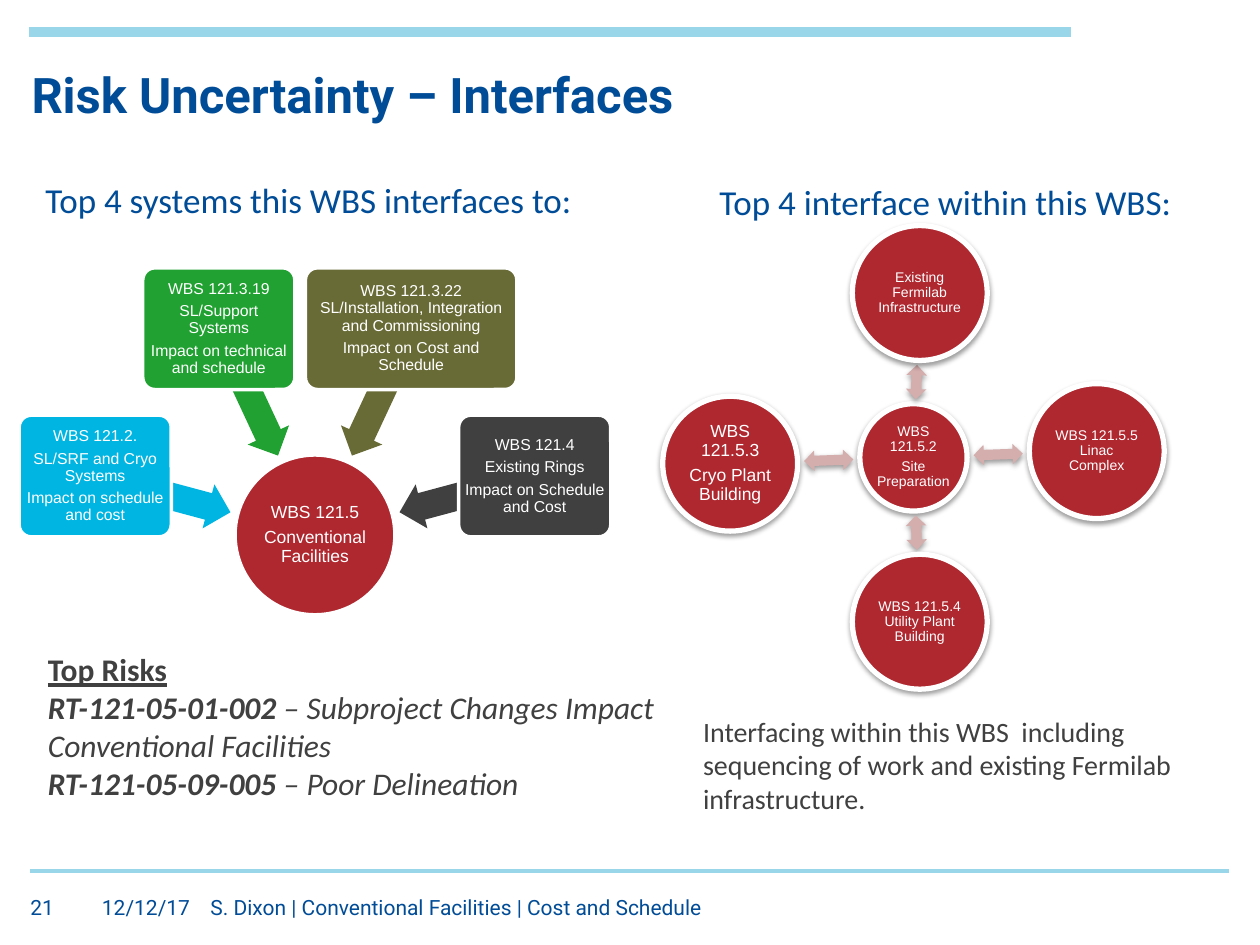
import math
from collections import namedtuple

from lxml import etree
from pptx import Presentation
from pptx import util as u
from pptx.dml.color import RGBColor
from pptx.enum import shapes, text
from pptx.oxml import ns

NAVY = RGBColor(0x00, 0x4C, 0x97)
SKY = RGBColor(0x99, 0xD6, 0xEA)
RED = RGBColor(0xAF, 0x27, 0x2F)
CYAN = RGBColor(0x00, 0xB5, 0xE2)
GREEN = RGBColor(0x20, 0xA1, 0x31)
OLIVE = RGBColor(0x68, 0x6B, 0x36)
CHARCOAL = RGBColor(0x40, 0x40, 0x40)
ROSE = RGBColor(0xD4, 0xAD, 0xAD)
WHITE = RGBColor(0xFF, 0xFF, 0xFF)

SHAPE = shapes.MSO_SHAPE
CELL = u.Inches(0.25)  # the slide is a grid of 40 columns by 30 rows
Box = namedtuple("Box", "left top width height")


def cells(*counts):
    return [round(count * CELL) for count in counts]


def centred(x, y, width, height):
    return Box(x - width / 2, y - height / 2, width, height)


def add_span(para, words, font, size, colour, bold=False, italic=False, underline=False):
    span = para.add_run()
    span.text = words
    span.font.name, span.font.size = font, u.Pt(size)
    span.font.color.rgb = colour
    span.font.bold, span.font.italic, span.font.underline = bold, italic, underline


def next_para(frame, index):
    return frame.paragraphs[0] if index == 0 else frame.add_paragraph()


def set_frame(frame, anchor, *insets):
    frame.word_wrap = True
    frame.auto_size = text.MSO_AUTO_SIZE.NONE
    frame.vertical_anchor = anchor
    (frame.margin_left, frame.margin_top,
     frame.margin_right, frame.margin_bottom) = [u.Inches(inset) for inset in insets]


def fill_placeholder(holder, box, paras, anchor, insets, **style):
    """Move a placeholder and fill it; each paragraph is a list of (words, emphasis) spans."""
    holder.left, holder.top, holder.width, holder.height = cells(*box)
    set_frame(holder.text_frame, anchor, *insets)
    for index, spans in enumerate(paras):
        para = next_para(holder.text_frame, index)
        props = para._p.get_or_add_pPr()
        props.set("marL", "0")
        props.set("indent", "0")
        etree.SubElement(props, ns.qn("a:buNone"))
        para.alignment = text.PP_ALIGN.LEFT
        para.space_before = u.Pt(0)
        for words, emphasis in spans:
            add_span(para, words, **style, **emphasis)


def add_rule(page, x1, y1, x2, y2, weight):
    rule = page.shapes.add_connector(shapes.MSO_CONNECTOR.STRAIGHT, *cells(x1, y1, x2, y2))
    rule.line.color.rgb = SKY
    rule.line.width = u.Pt(weight)
    etree.SubElement(rule._element.spPr, ns.qn("a:effectLst"))


def add_figure(page, kind, box, colour, outline=0, shadow=False):
    figure = page.shapes.add_shape(kind, *cells(*box))
    figure.fill.solid()
    figure.fill.fore_color.rgb = colour
    if outline:
        figure.line.color.rgb = WHITE
        figure.line.width = u.Pt(outline)
    else:
        figure.line.fill.background()
    figure.shadow.inherit = False
    if shadow:
        effects = figure._element.spPr.find(ns.qn("a:effectLst"))
        drop = etree.SubElement(effects, ns.qn("a:outerShdw"), blurRad=str(u.Pt(3.1)),
                                dist=str(u.Pt(1.6)), dir="5400000", rotWithShape="0")
        black = etree.SubElement(drop, ns.qn("a:srgbClr"), val="000000")
        etree.SubElement(black, ns.qn("a:alpha"), val="38000")
    return figure


def add_label(figure, lines, size, inset):
    set_frame(figure.text_frame, text.MSO_ANCHOR.MIDDLE, *[inset] * 4)
    for index, line in enumerate(lines):
        para = next_para(figure.text_frame, index)
        para.alignment = text.PP_ALIGN.CENTER
        para.line_spacing = 0.9
        para.space_after = u.Pt(0.35 * size)
        add_span(para, line, "Arial", size, WHITE)


def add_systems_fan(page, box):
    """Hub at the foot of the box, with cards and inward arrows 50 degrees apart."""
    hub = box.width * 0.27
    x, y = box.left + box.width / 2, box.top + box.height - hub / 2
    disc = add_figure(page, SHAPE.OVAL, centred(x, y, hub, hub), RED, 2)
    add_label(disc, ["WBS 121.5", "Conventional Facilities"], 10, 0.01)
    card_width, card_height = box.width * 0.257, box.height * 0.35
    cards = [
        (CYAN, 1, ["WBS 121.2.", "SL/SRF and Cryo Systems", "Impact on schedule and cost"]),
        (GREEN, 1, ["WBS 121.3.19", "SL/Support Systems", "Impact on technical and schedule"]),
        (OLIVE, 1.39, ["WBS 121.3.22 SL/Installation, Integration and Commissioning",
                       "Impact on Cost and Schedule"]),
        (CHARCOAL, 1, ["WBS 121.4", "Existing Rings", "Impact on Schedule and Cost"]),
    ]
    for index, (colour, stretch, lines) in enumerate(cards):
        angle = 195 + 50 * index
        dx, dy = math.cos(math.radians(angle)), math.sin(math.radians(angle))
        reach = hub * 0.985
        arrow = add_figure(page, SHAPE.LEFT_ARROW,
                           centred(x + reach * dx, y + reach * dy, hub * 0.875, hub * 0.285),
                           colour)
        arrow.adjustments[0], arrow.adjustments[1] = 0.6, 0.5
        arrow.rotation = angle
        reach = hub * 1.423
        card = add_figure(page, SHAPE.ROUNDED_RECTANGLE,
                          centred(x + reach * dx, y + reach * dy,
                                  card_width * stretch, card_height), colour, 2)
        card.adjustments[0] = 0.1
        add_label(card, lines, 9, 0.02)


def add_package_ring(page, box):
    """Central disc joined by double arrows to four discs around it."""
    hub, outer = box.width * 0.214, box.width * 0.269
    x, y = box.left + box.width / 2, box.top + box.height / 2
    disc = add_figure(page, SHAPE.OVAL, centred(x, y, hub, hub), RED, 3, True)
    add_label(disc, ["WBS 121.5.2", "Site Preparation"], 8, 0.01)
    across, down = (box.width - outer) / 2, (box.height - outer) / 2
    tilt = 0.2
    satellites = [
        (tilt, -down, 8, ["Existing Fermilab Infrastructure"]),
        (across, -tilt, 8, ["WBS 121.5.5 Linac Complex"]),
        (tilt, down, 8, ["WBS 121.5.4 Utility Plant Building"]),
        (-across, tilt, 10, ["WBS 121.5.3", "Cryo Plant Building"]),
    ]
    for dx, dy, size, lines in satellites:
        distance = math.hypot(dx, dy)
        gap = distance - (hub + outer) / 2
        share = (hub + gap) / 2 / distance
        arrow = add_figure(page, SHAPE.LEFT_RIGHT_ARROW,
                           centred(x + share * dx, y + share * dy, gap * 0.79, hub * 0.19),
                           ROSE, shadow=True)
        arrow.rotation = math.degrees(math.atan2(dy, dx)) % 360
        disc = add_figure(page, SHAPE.OVAL, centred(x + dx, y + dy, outer, outer),
                          RED, 3, True)
        add_label(disc, lines, size, 0.01)


def add_texts(page):
    title, left_head, left_body, right_head, right_body = page.placeholders
    plain, strong = {}, {"bold": True, "italic": True}
    padding = (0.1, 0.05, 0.1, 0.05)
    top = text.MSO_ANCHOR.TOP
    fill_placeholder(title, Box(1, 2.04, 38, 1.88),
                     [[("Risk Uncertainty – Interfaces", {"bold": True})]],
                     text.MSO_ANCHOR.BOTTOM, (0, 0, 0, 0), font="Roboto", size=28, colour=NAVY)
    heads = [
        (left_head, Box(1.04, 5.48, 18.4, 1.76), "Top 4 systems this WBS interfaces to:"),
        (right_head, Box(22.44, 5.52, 15.56, 1.76), "Top 4 interface within this WBS:"),
    ]
    for holder, box, words in heads:
        fill_placeholder(holder, box, [[(words, plain)]], top, padding,
                         font="Calibri", size=20, colour=NAVY)
    risks = [
        [("Top Risks", {"bold": True, "underline": True})],
        [("RT-121-05-01-002", strong),
         (" – Subproject Changes Impact Conventional Facilities", {"italic": True})],
        [("RT-121-05-09-005", strong), (" – Poor Delineation", {"italic": True})],
    ]
    fill_placeholder(left_body, Box(1.12, 20.44, 20.36, 5.24), risks, top, padding,
                     font="Calibri", size=18, colour=CHARCOAL)
    remark = ("Interfacing within this WBS  including sequencing of work "
              "and existing Fermilab infrastructure.")
    fill_placeholder(right_body, Box(21.92, 22.48, 17.08, 3.64), [[(remark, plain)]], top,
                     padding, font="Calibri", size=16, colour=CHARCOAL)


def add_footer(page, box):
    add_rule(page, box.left, box.top, box.left + box.width, box.top, 2.25)
    parts = [
        (0, 1.8, "21"),
        (2.28, 2.96, "12/12/17"),
        (5.72, 24.24, "S. Dixon | Conventional Facilities | Cost and Schedule"),
    ]
    for offset, width, words in parts:
        note = page.shapes.add_textbox(*cells(box.left + offset, box.top + 0.76, width, 1.04))
        set_frame(note.text_frame, text.MSO_ANCHOR.TOP, 0, 0, 0, 0)
        add_span(note.text_frame.paragraphs[0], words, "Roboto", 12, NAVY)


def main():
    deck = Presentation()
    deck.slide_width, deck.slide_height = cells(40, 30)
    page = deck.slides.add_slide(deck.slide_layouts.get_by_name("Comparison"))
    add_rule(page, 0.92, 1.02, 34, 1.02, 6)
    add_texts(page)
    add_systems_fan(page, Box(0.6, 8.48, 18.8, 11.04))
    add_package_ring(page, Box(21.04, 7.16, 15.92, 14.72))
    add_footer(page, Box(0.96, 27.64, 38.04, 2))
    deck.save("out.pptx")


if __name__ == "__main__":
    main()
